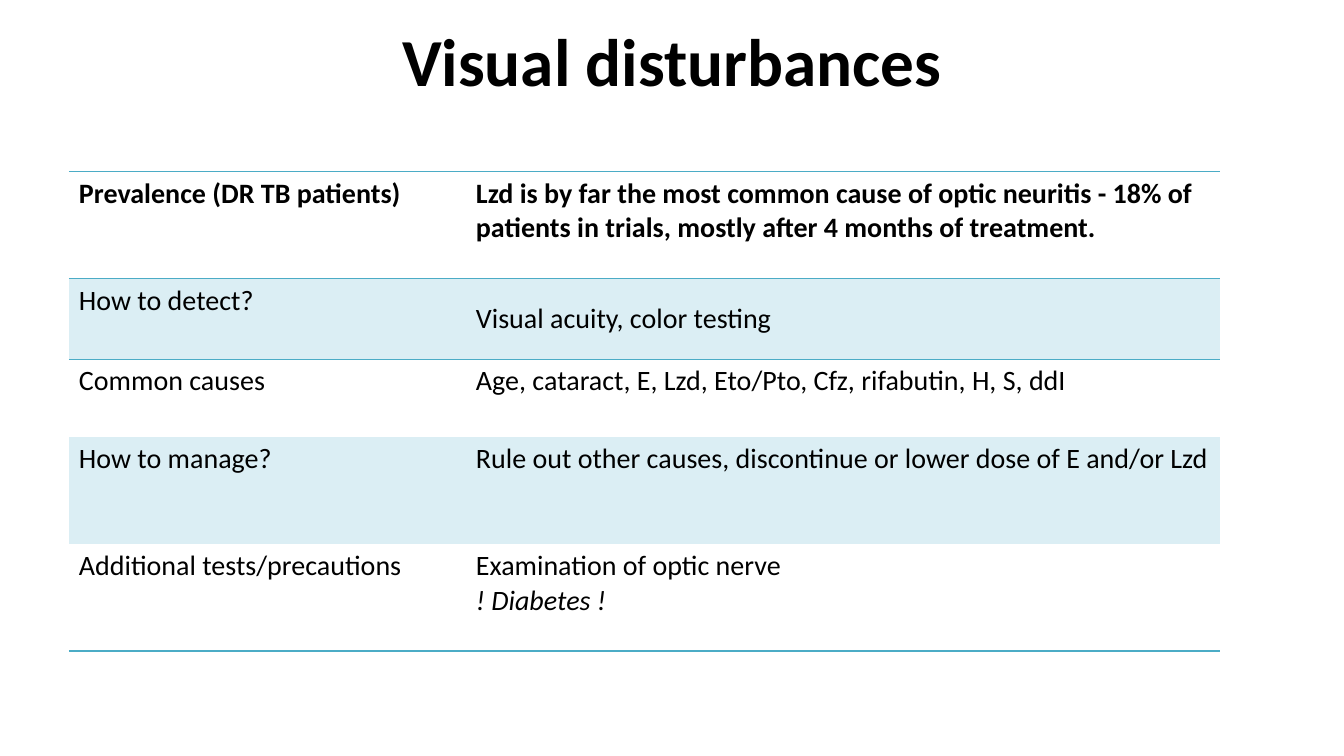
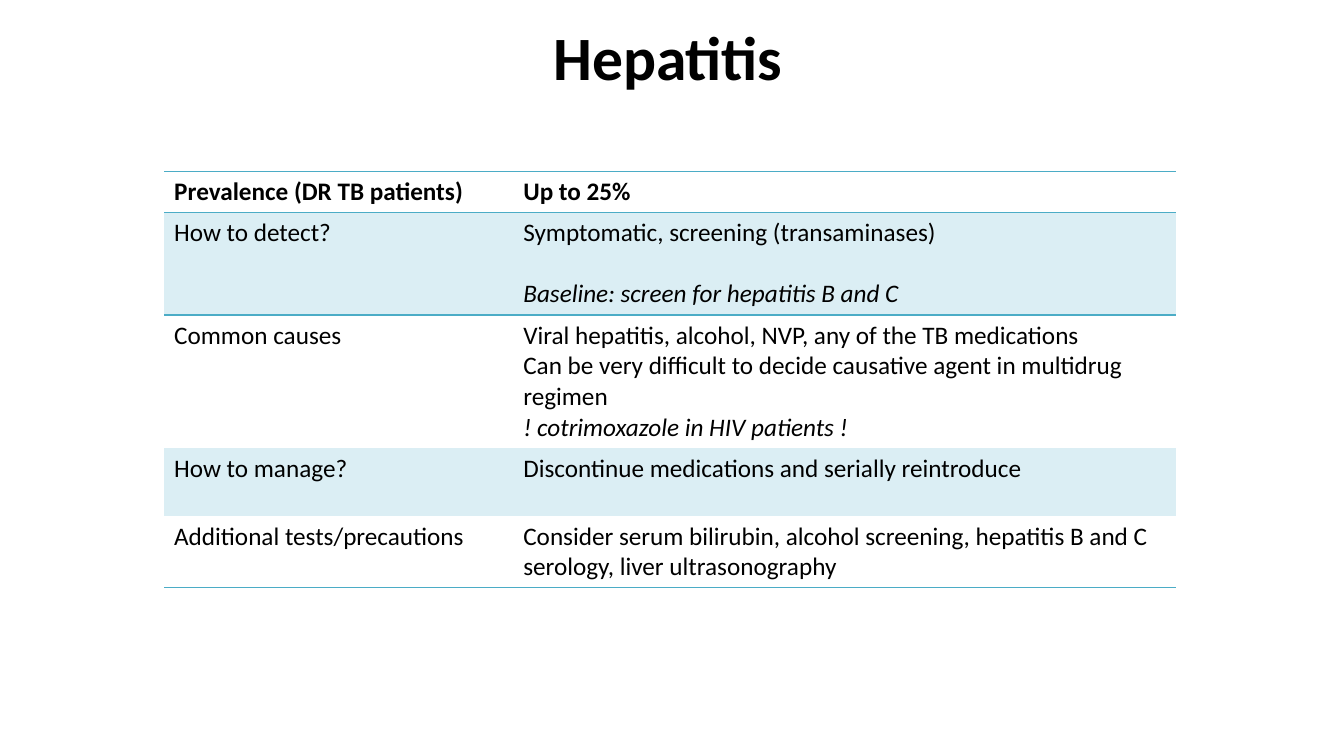
"""Build two side-effect summary slides, each with a title and a ruled table."""
from dataclasses import dataclass

import pptx
import pptx.dml.color
import pptx.enum.text
import pptx.oxml.ns
import pptx.util
from lxml import etree

Pt = pptx.util.Pt
RGB = pptx.dml.color.RGBColor
ALIGN = pptx.enum.text.PP_ALIGN
ANCHOR = pptx.enum.text.MSO_ANCHOR
qn = pptx.oxml.ns.qn


@dataclass(frozen=True)
class Theme:
    font: str = "Calibri"
    text: str = "000000"
    rule: str = "4BACC6"
    band: str = "DBEEF4"
    rule_width: float = 1
    line_height: float = 1.22
    plain_table: str = "{2D5ABB26-0587-4C30-8999-92F81FD0307C}"


LABELS = ["Prevalence (DR TB patients)", "How to detect?", "Common causes",
          "How to manage?", "Additional tests/precautions"]


def apply(obj, values):
    for name, value in values.items():
        setattr(obj, name, value)


class Deck:
    def __init__(self, theme):
        self.theme = theme
        self.prs = pptx.Presentation()
        apply(self.prs, {"slide_width": Pt(960), "slide_height": Pt(540)})
        self.s = None

    def slide(self):
        self.s = self.prs.slides.add_slide(self.prs.slide_layouts[6])

    def paragraphs(self, tf, lines, size, bold=False, align=ALIGN.LEFT):
        for i, line in enumerate(lines):
            text, style = line if isinstance(line, tuple) else (line, {})
            p = tf.paragraphs[0] if i == 0 else tf.add_paragraph()
            p.alignment = align
            if style.get("gap"):
                p.space_before = Pt(size * self.theme.line_height)
            r = p.add_run()
            r.text = text
            apply(r.font, {"name": self.theme.font, "size": Pt(size), "bold": bold,
                           "italic": style.get("italic", False)})
            r.font.color.rgb = RGB.from_string(self.theme.text)

    def title(self, text, left, size):
        sp = self.s.shapes.add_textbox(Pt(left), Pt(10), Pt(720), Pt(90))
        apply(sp.text_frame, {"word_wrap": True, "vertical_anchor": ANCHOR.TOP})
        self.paragraphs(sp.text_frame, [text], size, True, ALIGN.CENTER)

    def rule(self, cell, *sides):
        tcPr = cell._tc.get_or_add_tcPr()
        for i, side in enumerate(sides):
            ln = etree.Element(qn("a:" + side), w=str(Pt(self.theme.rule_width)))
            fill = etree.SubElement(ln, qn("a:solidFill"))
            etree.SubElement(fill, qn("a:srgbClr"), val=self.theme.rule)
            tcPr.insert(i, ln)

    def table(self, left, widths, heights, size, answers):
        frame = self.s.shapes.add_table(len(heights), len(widths), Pt(left), Pt(122.4),
                                        Pt(sum(widths)), Pt(sum(heights)))
        table = frame.table
        apply(table, {"first_row": False, "horz_banding": False})
        table._tbl.tblPr.find(qn("a:tableStyleId")).text = self.theme.plain_table
        for column, width in zip(table.columns, widths):
            column.width = Pt(width)
        for i, (row, height) in enumerate(zip(table.rows, heights)):
            row.height = Pt(height)
            for j, lines in enumerate(([LABELS[i]], answers[i])):
                cell = table.cell(i, j)
                middle = i == 1 and j == 1
                cell.vertical_anchor = ANCHOR.MIDDLE if middle else ANCHOR.TOP
                self.paragraphs(cell.text_frame, lines, size, bold=i == 0)
                if i % 2:
                    cell.fill.solid()
                    cell.fill.fore_color.rgb = RGB.from_string(self.theme.band)
                else:
                    cell.fill.background()
                if i == 0:
                    self.rule(cell, "lnT", "lnB")
                elif i == 1:
                    self.rule(cell, "lnT")
                elif i == len(heights) - 1:
                    self.rule(cell, "lnB")


def main():
    deck = Deck(Theme())

    deck.slide()
    deck.title("Visual disturbances", 120, 48)
    deck.table(49.2, (283.6, 538.6), (76.4, 57.8, 55.6, 76.4, 76.4), 20, [
        ["Lzd is by far the most common cause of optic neuritis - 18% of patients "
         "in trials, mostly after 4 months of treatment."],
        ["Visual acuity, color testing"],
        ["Age, cataract, E, Lzd, Eto/Pto, Cfz, rifabutin, H, S, ddI"],
        ["Rule out other causes, discontinue or lower dose of E and/or Lzd"],
        ["Examination of optic nerve", ("! Diabetes !", {"italic": True})],
    ])

    deck.slide()
    deck.title("Hepatitis", 117.2, 44)
    deck.table(117.2, (249.4, 473.2), (29.2, 73.4, 95, 48.6, 50.8), 18, [
        ["Up to 25%"],
        ["Symptomatic, screening (transaminases)",
         ("Baseline: screen for hepatitis B and C", {"italic": True, "gap": True})],
        ["Viral hepatitis, alcohol, NVP, any of the TB medications",
         "Can be very difficult to decide causative agent in multidrug regimen",
         ("! cotrimoxazole in HIV patients !", {"italic": True})],
        ["Discontinue medications and serially reintroduce"],
        ["Consider serum bilirubin, alcohol screening, hepatitis B and C serology, "
         "liver ultrasonography"],
    ])

    deck.prs.save("out.pptx")


if __name__ == "__main__":
    main()
